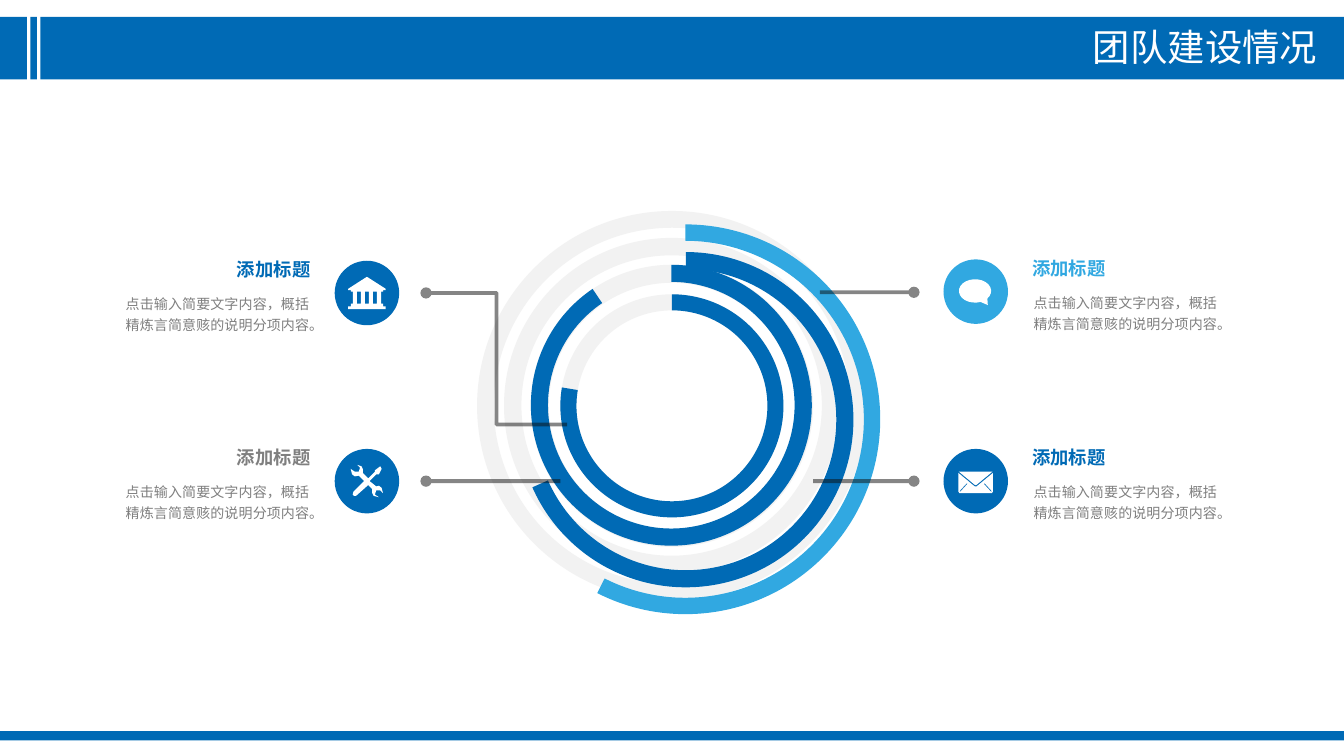
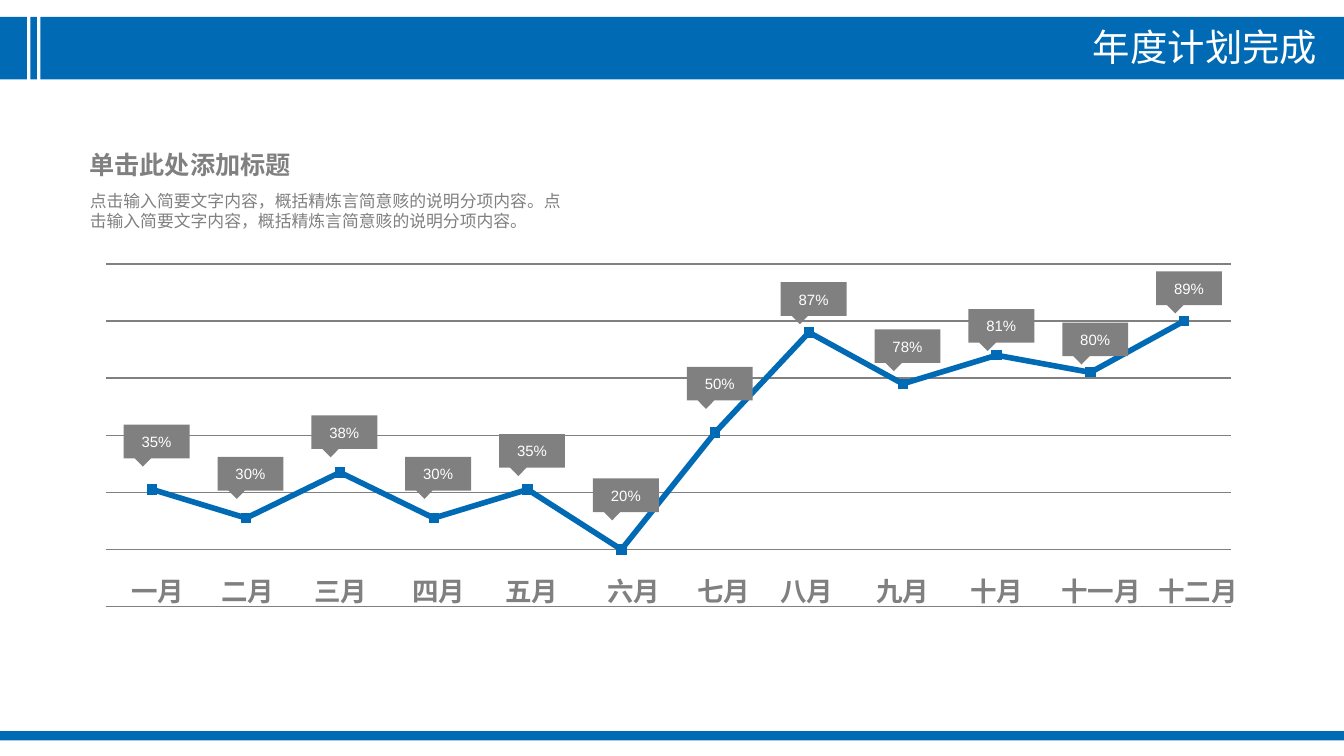
from dataclasses import dataclass
from math import cos, radians, sin

from lxml.etree import SubElement
from pptx import Presentation
from pptx.chart.data import CategoryChartData
from pptx.dml.color import RGBColor
from pptx.enum.chart import XL_CHART_TYPE, XL_MARKER_STYLE
from pptx.enum.shapes import MSO_CONNECTOR, MSO_SHAPE
from pptx.enum.text import MSO_ANCHOR, MSO_AUTO_SIZE, PP_ALIGN
from pptx.oxml import parse_xml
from pptx.oxml.ns import nsdecls, qn
from pptx.util import Inches, Pt

BLUE = RGBColor(0x00, 0x6A, 0xB5)
SKY = RGBColor(0x31, 0xA8, 0xE1)
PALE = RGBColor(0xF2, 0xF2, 0xF2)
GRAY = RGBColor(0x80, 0x80, 0x80)
TEXT_GRAY = RGBColor(0x7F, 0x7F, 0x7F)
INK = RGBColor(0x0D, 0x0D, 0x0D)
WHITE = RGBColor(0xFF, 0xFF, 0xFF)
FONT = "Arial"
SENTENCE = "点击输入简要文字内容，概括精炼言简意赅的说明分项内容。"


def cells(count):
    """The slide is a grid of 100 columns by 56.25 rows."""
    return Inches(count / 10)


@dataclass
class Box:
    x: float
    y: float
    w: float
    h: float

    def inner(self, dx, dy, w, h):
        return Box(self.x + dx, self.y + dy, w, h)

    def emu(self):
        return [cells(side) for side in (self.x, self.y, self.w, self.h)]


PAGE = Box(0, 0, 100, 56.25)


# ---- shared building parts ----
def assign(target, values):
    for name, value in values.items():
        setattr(target, name, value)


def paint(shape, color):
    shape.shadow.inherit = False
    shape.fill.solid()
    shape.fill.fore_color.rgb = color
    shape.line.fill.background()


def add_figure(page, kind, box, color, adjustments=()):
    shape = page.shapes.add_shape(kind, *box.emu())
    paint(shape, color)
    for index, value in enumerate(adjustments):
        shape.adjustments[index] = value
    return shape


def write(shape, text, size, color, bold=False, frame_format=None, para_format=None):
    frame = shape.text_frame
    assign(frame, {"word_wrap": True, **(frame_format or {})})
    para = frame.paragraphs[0]
    assign(para, para_format or {})
    span = para.add_run()
    span.text = text
    assign(span.font, {"name": FONT, "size": Pt(size), "bold": bold})
    span.font.color.rgb = color


def add_text(page, box, *args, **formats):
    write(page.shapes.add_textbox(*box.emu()), *args, **formats)


GROW = {"auto_size": MSO_AUTO_SIZE.SHAPE_TO_FIT_TEXT}
NO_INSET = dict.fromkeys(("margin_left", "margin_top", "margin_right", "margin_bottom"), 0)


def add_page(deck, title):
    page = deck.slides.add_slide(deck.slide_layouts[6])
    # Header band with two white slits, and footer band
    for band in (Box(3, 1.25, 97, 4.65), Box(0, 1.25, 2, 4.65),
                 Box(2.25, 1.25, 0.5, 4.65), Box(0, 54.4, 100, 0.7)):
        add_figure(page, MSO_SHAPE.RECTANGLE, band, BLUE)
    add_text(page, PAGE.inner(56.3, 1.3, 42.7, 4.4), title, 20, WHITE,
             frame_format=GROW, para_format={"alignment": PP_ALIGN.RIGHT})
    return page


# ---- icons: contours in hundredths of an inch around the badge centre ----
def mirrored(half):
    return half + [(-x, y) for x, y in reversed(half)]


def bubble_icon():
    oval = [(-0.5 + 12 * cos(radians(a)), -0.5 + 8.7 * sin(radians(a)))
            for a in range(70, 401, 15)]
    return [oval + [(9, 10)]]


def bank_icon():
    house = mirrored([(0, -12), (14, -3), (14, -2), (12, -2), (12, -1), (10.5, -1),
                      (10.5, 8), (12, 8), (12, 10), (14, 10), (14, 12)])
    gaps = [[(x, -1), (x, 8), (x + 3, 8), (x + 3, -1)] for x in (-7.5, -1.5, 4.5)]
    return [house, *gaps]


def tools_icon():
    return [[(11, 5), (9, 3.5), (7, 4), (2, 0), (7, -5), (9, -5), (11, -9), (10, -11),
             (6, -8), (6, -7), (1, -2), (-3, -6), (-3, -9), (-4, -11), (-7, -12),
             (-5, -10), (-6, -7), (-9, -7), (-12, -9), (-11, -5), (-9, -3.5), (-6, -4),
             (-2, 0), (-10, 8), (-10.5, 10), (-9.5, 11), (-8, 11), (1, 3), (4, 6),
             (4, 9), (5, 11), (9, 12), (6, 10), (7, 7), (10, 7), (12, 9)]]


def mail_icon():
    flap = [(-12.5, -7), (12.5, -7), (0.5, 3), (-0.5, 3)]
    body = mirrored([(0.7, 4), (12.8, -6), (12.8, 8), (12, 9)])
    slit = [(-12, 7.5), (-7, 2), (-6, 2), (-11.5, 8)]
    return [flap, body, slit, [(-x, y) for x, y in slit]]


def add_icon(page, box, contours):
    center_x, center_y = box.x + box.w / 2, box.y + box.h / 2
    placed = [[(cells(center_x + x / 10), cells(center_y + y / 10)) for x, y in contour]
              for contour in contours]
    builder = page.shapes.build_freeform(*placed[0][0], scale=1.0)
    for index, (start, *rest) in enumerate(placed):
        if index:
            builder.move_to(*start)
        builder.add_line_segments(rest, close=True)
    paint(builder.convert_to_shape(), WHITE)


# ---- team slide regions ----
def draw_rings(page, box):
    # Pale tracks
    for dx, size, thickness in ((2, 24.95, 0.052), (4, 21, 0.064),
                                (6.2, 16.6, 0.072), (0, 29, 0.043)):
        add_figure(page, MSO_SHAPE.DONUT, box.inner(dx, dx, size, size), PALE, [thickness])
    # Progress arcs run clockwise from the top; angles in degrees
    for dx, size, end, thickness, color in (
            (1, 29, 116.88, 0.042, SKY), (3.05, 24.95, 156.21, 0.051, BLUE),
            (4, 20.9, 235.9, 0.061, BLUE), (6.2, 16.6, 189.5, 0.072, BLUE)):
        add_figure(page, MSO_SHAPE.BLOCK_ARC, box.inner(dx, dx, size, size), color,
                   [270 * 0.6, end * 0.6, thickness])


def draw_item(page, box, on_left, badge_color, title_color, icon):
    text_x, title_x, badge_x = (0, 0, box.w - 4.8) if on_left else (6.7, 6.6, 0)
    align = PP_ALIGN.RIGHT if on_left else PP_ALIGN.LEFT
    badge = box.inner(badge_x, 0, 4.8, 4.8)
    add_figure(page, MSO_SHAPE.OVAL, badge, badge_color)
    add_icon(page, badge, icon())
    add_text(page, box.inner(text_x, 2.3, 14.2, 4.6), SENTENCE, 7.5, TEXT_GRAY,
             frame_format=NO_INSET, para_format={"alignment": align, "line_spacing": 1.25})
    add_text(page, box.inner(title_x, 0, 14.3, 2.3), "添加标题", 9.8, title_color, bold=True,
             frame_format=NO_INSET, para_format={"alignment": align, "line_spacing": 0.9,
                                                 "space_before": Pt(7.5)})


def add_leader(page, kind, *ends):
    leader = page.shapes.add_connector(kind, *[cells(end) for end in ends])
    leader.line.width = Pt(2)
    leader.line.color.rgb = INK
    line = leader.line._get_or_add_ln()
    SubElement(line.find(".//" + qn("a:srgbClr")), qn("a:alpha"), val="50000")
    SubElement(line, qn("a:tailEnd"), type="oval")
    SubElement(leader._element.spPr, qn("a:effectLst"))


def build_team(deck):
    page = add_page(deck, "团队建设情况")
    draw_rings(page, Box(35.5, 15.7, 29, 29))
    for x, y, on_left, badge_color, title_color, icon in (
            (70.2, 19.3, False, SKY, SKY, bubble_icon),
            (70.2, 33.4, False, BLUE, BLUE, mail_icon),
            (8.8, 19.4, True, BLUE, BLUE, bank_icon),
            (8.8, 33.4, True, BLUE, TEXT_GRAY, tools_icon)):
        draw_item(page, Box(x, y, 20.9, 6.9), on_left, badge_color, title_color, icon)
    # Leaders from the rings to the items
    for kind, *ends in ((MSO_CONNECTOR.STRAIGHT, 61, 21.75, 68, 21.75),
                        (MSO_CONNECTOR.STRAIGHT, 60.5, 35.8, 68, 35.8),
                        (MSO_CONNECTOR.STRAIGHT, 41.7, 35.8, 31.7, 35.8),
                        (MSO_CONNECTOR.ELBOW, 42.2, 31.6, 31.7, 21.8)):
        add_leader(page, kind, *ends)


# ---- plan slide regions ----
# Month, left edge of its label, chart value, callout text, top of its callout
MONTHS = [
    ("一月", 8.8, 41, "35%", 31.6), ("二月", 15.5, 31, "30%", 34),
    ("三月", 22.4, 47, "38%", 30.9), ("四月", 29.7, 31, "30%", 34),
    ("五月", 36.6, 41, "35%", 32.3), ("六月", 44.2, 20, "20%", 35.6),
    ("七月", 50.9, 61, "50%", 27.3), ("八月", 57.1, 96, "87%", 21),
    ("九月", 64.2, 78, "78%", 24.5), ("十月", 71.2, 88, "81%", 23),
    ("十一月", 78, 82, "80%", 24), ("十二月", 85.2, 100, "89%", 20.2),
]


def draw_chart(page, box):
    data = CategoryChartData()
    data.categories = [str(number) for number in range(1, len(MONTHS) + 1)]
    data.add_series("Series 1", [month[2] for month in MONTHS])
    chart = page.shapes.add_chart(XL_CHART_TYPE.LINE_MARKERS, *box.emu(), data).chart
    assign(chart, {"has_legend": False, "has_title": False})
    assign(chart.font, {"name": FONT, "size": Pt(18)})
    chart.category_axis.visible = False
    axis = chart.value_axis
    assign(axis, {"visible": False, "minimum_scale": 0, "maximum_scale": 120,
                  "major_unit": 20, "has_major_gridlines": True})
    grid = axis.major_gridlines.format.line
    grid.width = Pt(0.75)
    grid.color.rgb = GRAY
    # Line and markers
    chart.plots[0].vary_by_categories = False
    series = chart.plots[0].series[0]
    series.smooth = False
    series.format.line.width = Pt(3)
    series.format.line.color.rgb = BLUE
    assign(series.marker, {"style": XL_MARKER_STYLE.SQUARE, "size": 5})
    series.marker.format.fill.solid()
    series.marker.format.fill.fore_color.rgb = BLUE
    series.marker.format.line.color.rgb = BLUE
    # Fixed plot area
    sides = "".join(f'<c:{name} val="{value}"/>' for name, value in (
        ("layoutTarget", "inner"), ("xMode", "edge"), ("yMode", "edge"),
        ("x", 0), ("y", 0.204), ("w", 0.906), ("h", 0.796)))
    plot_area = chart._chartSpace.chart.plotArea
    for layout in plot_area.findall(qn("c:layout")):
        plot_area.remove(layout)
    plot_area.insert(0, parse_xml(
        f'<c:layout {nsdecls("c")}><c:manualLayout>{sides}</c:manualLayout></c:layout>'))


def draw_callouts(page, box):
    step = box.w * 0.906 / len(MONTHS)
    for index, (_, _, _, label, top) in enumerate(MONTHS):
        callout = add_figure(page, MSO_SHAPE.RECTANGULAR_CALLOUT,
                             Box(box.x + 1.4 + index * step, top, 4.9, 2.5), GRAY,
                             [-0.208, 0.75])
        write(callout, label, 8, WHITE, frame_format={"vertical_anchor": MSO_ANCHOR.MIDDLE},
              para_format={"alignment": PP_ALIGN.CENTER})


def draw_intro(page, box):
    add_text(page, box.inner(0, 3.1, box.w, 4), SENTENCE * 2, 9, GRAY, frame_format=GROW)
    add_text(page, box.inner(0, 0, box.w, 3.3), "单击此处添加标题", 13.5, GRAY, bold=True,
             frame_format=GROW)


def draw_month_labels(page, top):
    for name, left, *_ in MONTHS:
        add_text(page, Box(left, top, 2 + 2 * len(name), 3.4), name, 14.2, GRAY, bold=True,
                 frame_format={**GROW, "word_wrap": False})


def build_plan(deck):
    page = add_page(deck, "年度计划完成")
    chart_box = Box(7.8, 13.1, 92.5, 32.1)
    draw_chart(page, chart_box)
    draw_callouts(page, chart_box)
    draw_intro(page, Box(5.7, 10.6, 37, 7.1))
    draw_month_labels(page, 42.3)


def main():
    deck = Presentation()
    assign(deck, {"slide_width": cells(PAGE.w), "slide_height": cells(PAGE.h)})
    build_team(deck)
    build_plan(deck)
    deck.save("out.pptx")


if __name__ == "__main__":
    main()
